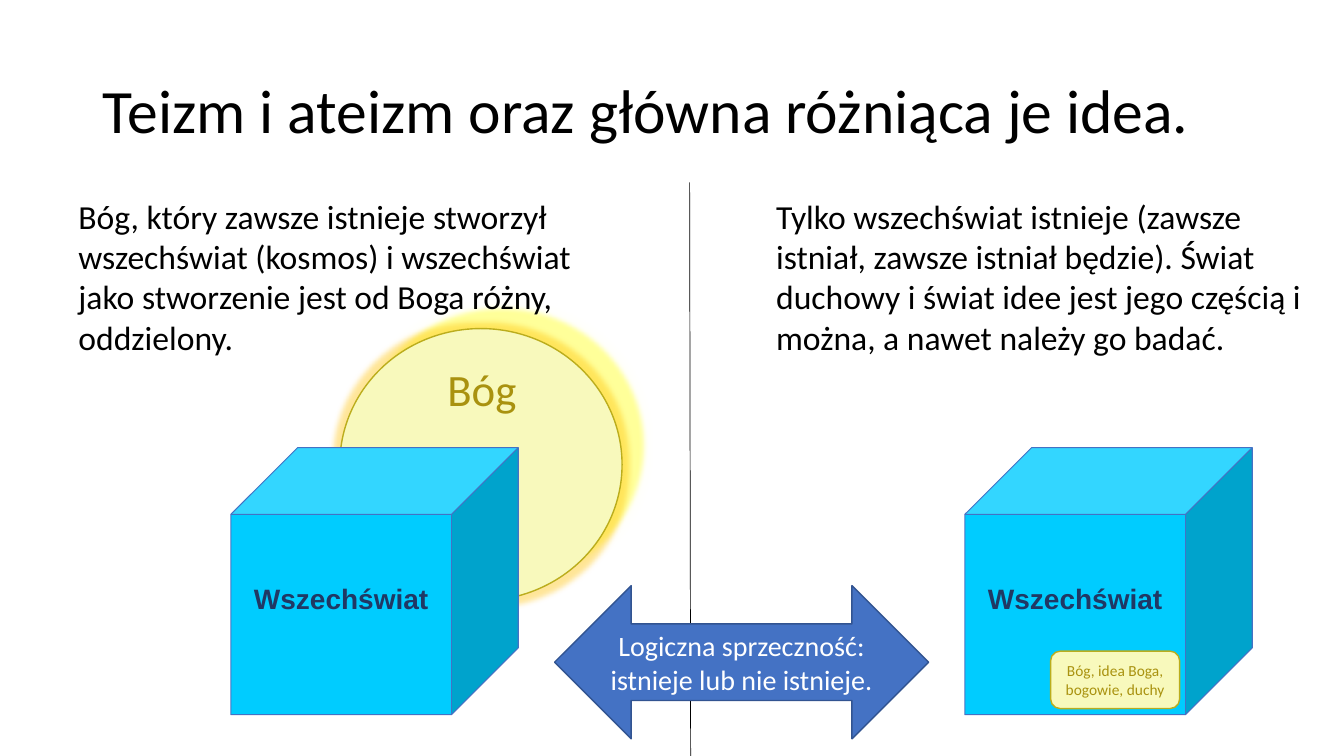
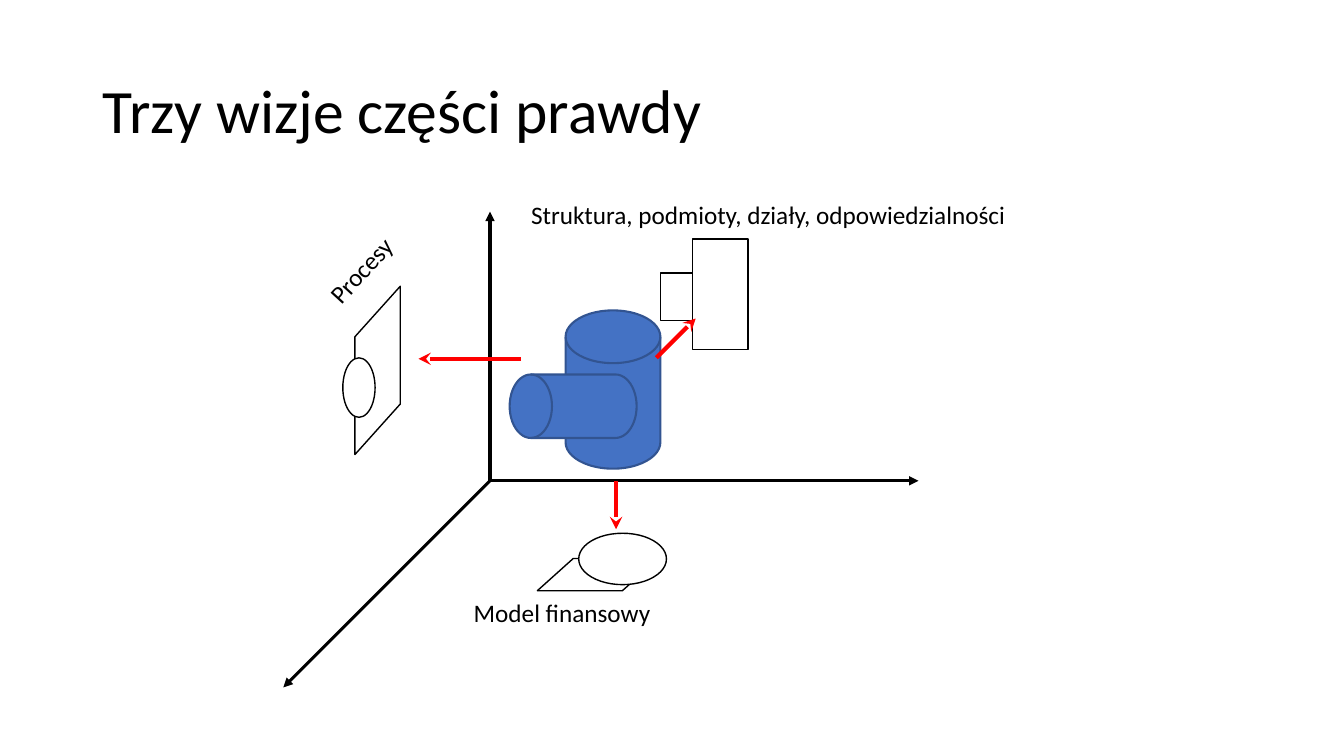
from lxml.etree import SubElement
from pptx import Presentation
from pptx.dml.color import RGBColor
from pptx.enum.shapes import MSO_CONNECTOR, MSO_SHAPE as SHAPE
from pptx.enum.text import MSO_ANCHOR as ANCHOR, MSO_AUTO_SIZE, PP_ALIGN as ALIGN
from pptx.oxml.ns import qn
from pptx.util import Inches, Pt

BLACK, WHITE, RED = "000000", "FFFFFF", "FF0000"
BLUE, DARK_BLUE, CYAN, NAVY = "4472C4", "325491", "00CCFF", "203864"
CREAM, OLIVE, GOLD = "F8F9BC", "BBAD1D", "A9920F"
HALO, GLOW = "FFFF00", "FFC000"
TITLE_BOX = (0.92, 0.4, 11.5, 1.45)

# Slide 1
IDEAS_TITLE = "Teizm i ateizm oraz główna różniąca je idea."
VIEWS = [  # text left, cube left, text
    (0.68, 2.29, "Bóg, który zawsze istnieje stworzył wszechświat (kosmos) i wszechświat "
                 "jako stworzenie jest od Boga różny, oddzielony."),
    (7.6, 9.57, "Tylko wszechświat istnieje (zawsze istniał, zawsze istniał będzie). Świat "
                "duchowy i świat idee jest jego częścią i można, a nawet należy go badać."),
]
GOD, UNIVERSE = "Bóg", "Wszechświat"
GOD_IDEA = "Bóg, idea Boga, bogowie, duchy"
CONTRADICTION = "Logiczna sprzeczność:\nistnieje lub nie istnieje."

# Slide 2
VISIONS_TITLE = "Trzy wizje części prawdy"
ORIGIN = (4.86, 4.77)
AXIS_ENDS = [(9.11, 4.77), (4.86, 2.1), (2.81, 6.82)]
PROJECTIONS = [  # red arrows: start, end
    ((6.51, 3.55), (6.9, 3.16)),
    ((5.17, 3.56), (4.15, 3.56)),
    ((6.11, 4.77), (6.11, 5.25)),
]
VISION_LABELS = [  # text, box, rotation
    ("Struktura, podmioty, działy, odpowiedzialności", (5.17, 1.93, 5.27, 0.4), 0),
    ("Procesy", (2.98, 2.23, 1.65, 0.4), 312.5),
    ("Model finansowy", (4.6, 5.88, 2.73, 0.4), 0),
]
SLANT = 1.114


def rgb(color):
    return RGBColor.from_string(color)


def inches(values):
    return [Inches(value) for value in values]


def write(frame, text, size=18, color=BLACK, font="Calibri", bold=False, align=ALIGN.LEFT,
          anchor=ANCHOR.TOP, wrap=True, spacing=None, bottom=0.05):
    frame.auto_size = MSO_AUTO_SIZE.NONE
    frame.word_wrap = wrap
    frame.vertical_anchor = anchor
    frame.margin_bottom = Inches(bottom)
    paragraph = frame.paragraphs[0]
    paragraph.text = text
    paragraph.alignment = align
    paragraph.line_spacing = spacing
    for run in paragraph.runs:
        run.font.size, run.font.name, run.font.bold = Pt(size), font, bold
        run.font.color.rgb = rgb(color)


def add_label(slide, text, box, rotation=0, **style):
    label = slide.shapes.add_textbox(*inches(box))
    label.rotation = rotation
    write(label.text_frame, text, **style)


def add_figure(parent, preset, box, fill=WHITE, line=BLACK, width=1, rotation=0, text="", **style):
    """Add a preset shape to a slide or group, with centred text if given."""
    figure = parent.shapes.add_shape(preset, *inches(box))
    figure.shadow.inherit = False
    figure.fill.solid()
    figure.fill.fore_color.rgb = rgb(fill)
    figure.line.color.rgb = rgb(line)
    figure.line.width = Pt(width)
    figure.rotation = rotation
    if text:
        write(figure.text_frame, text, align=ALIGN.CENTER, anchor=ANCHOR.MIDDLE, **style)
    return figure


def add_line(slide, start, end, color=BLACK, width=2.25, head=None):
    line = slide.shapes.add_connector(MSO_CONNECTOR.STRAIGHT, *inches(start + end))
    line.line.color.rgb = rgb(color)
    line.line.width = Pt(width)
    if head:
        SubElement(line.line._get_or_add_ln(), qn("a:tailEnd"), type=head)
    SubElement(line._element.spPr, qn("a:effectLst"))


def add_halo(figure):
    """Give the figure a glow and a yellow shadow towards the upper right."""
    effects = figure._element.spPr.find(qn("a:effectLst"))
    glow = SubElement(effects, qn("a:glow"), rad=str(Pt(8)))
    shadow = SubElement(effects, qn("a:outerShdw"), blurRad=str(Pt(4)), dist=str(Pt(20)),
                        dir=str(315 * 60000), algn="ctr", rotWithShape="0")
    for effect, color in ((glow, GLOW), (shadow, HALO)):
        tint = SubElement(effect, qn("a:srgbClr"), val=color)
        SubElement(tint, qn("a:alpha"), val="40000")


def add_slide(deck, title):
    slide = deck.slides.add_slide(deck.slide_layouts[5])
    heading = slide.shapes.title
    heading.left, heading.top, heading.width, heading.height = inches(TITLE_BOX)
    write(heading.text_frame, title, size=44, anchor=ANCHOR.MIDDLE, spacing=0.9)
    return slide


def build_ideas(deck):
    slide = add_slide(deck, IDEAS_TITLE)
    add_halo(add_figure(slide, SHAPE.OVAL, (3.37, 3.26, 2.8, 2.7), CREAM, OLIVE))
    add_label(slide, GOD, (3.79, 3.54, 1.98, 0.62), size=32, color=GOLD, align=ALIGN.CENTER)
    for text_left, cube_left, view in VIEWS:
        add_figure(slide, SHAPE.CUBE, (cube_left, 4.44, 2.85, 2.65), CYAN, BLUE, 0.75,
                   text=UNIVERSE, size=20, color=NAVY, font="Arial", bold=True,
                   wrap=False, bottom=0.38)
        add_label(slide, view, (text_left, 1.89, 5.64, 1.72), size=24)
    add_figure(slide, SHAPE.ROUNDED_RECTANGLE, (10.42, 6.46, 1.28, 0.57), CREAM, OLIVE,
               text=GOD_IDEA, size=11, color=GOLD)
    add_line(slide, (6.84, 1.81), (6.85, 7.5), width=0.5)
    add_figure(slide, SHAPE.LEFT_RIGHT_ARROW, (5.5, 5.81, 3.71, 1.52), BLUE, DARK_BLUE,
               text=CONTRADICTION, size=20, color=WHITE)


def build_visions(deck):
    slide = add_slide(deck, VISIONS_TITLE)
    for end in AXIS_ENDS:
        add_line(slide, ORIGIN, end, head="triangle")

    structure = slide.shapes.add_group_shape()
    for box in ((6.55, 2.71, 0.48, 0.47), (6.87, 2.37, 0.55, 1.1)):
        add_figure(structure, SHAPE.RECTANGLE, box)

    process_side = add_figure(slide, SHAPE.PARALLELOGRAM, (2.91, 3.45, 1.67, 0.45), rotation=90)
    process_side._element.spPr.xfrm.set("flipV", "1")
    add_figure(slide, SHAPE.OVAL, (3.4, 3.55, 0.32, 0.59))
    finance_side = add_figure(slide, SHAPE.PARALLELOGRAM, (5.33, 5.54, 1.2, 0.32))
    add_figure(slide, SHAPE.OVAL, (5.74, 5.29, 0.87, 0.51))
    for side in (process_side, finance_side):
        side.adjustments[0] = SLANT

    solid = slide.shapes.add_group_shape()
    for box, rotation in (((5.61, 3.08, 0.94, 1.57), 0), ((5.37, 3.4, 0.63, 1.26), 270)):
        add_figure(solid, SHAPE.FLOWCHART_MAGNETIC_DISK, box, BLUE, DARK_BLUE, 1.5, rotation)

    for start, end in PROJECTIONS:
        add_line(slide, start, end, RED, 3, "stealth")
    for text, box, rotation in VISION_LABELS:
        add_label(slide, text, box, rotation)


def main():
    deck = Presentation()
    deck.slide_width, deck.slide_height = Inches(13.33), Inches(7.5)
    build_ideas(deck)
    build_visions(deck)
    deck.save("out.pptx")


if __name__ == "__main__":
    main()
